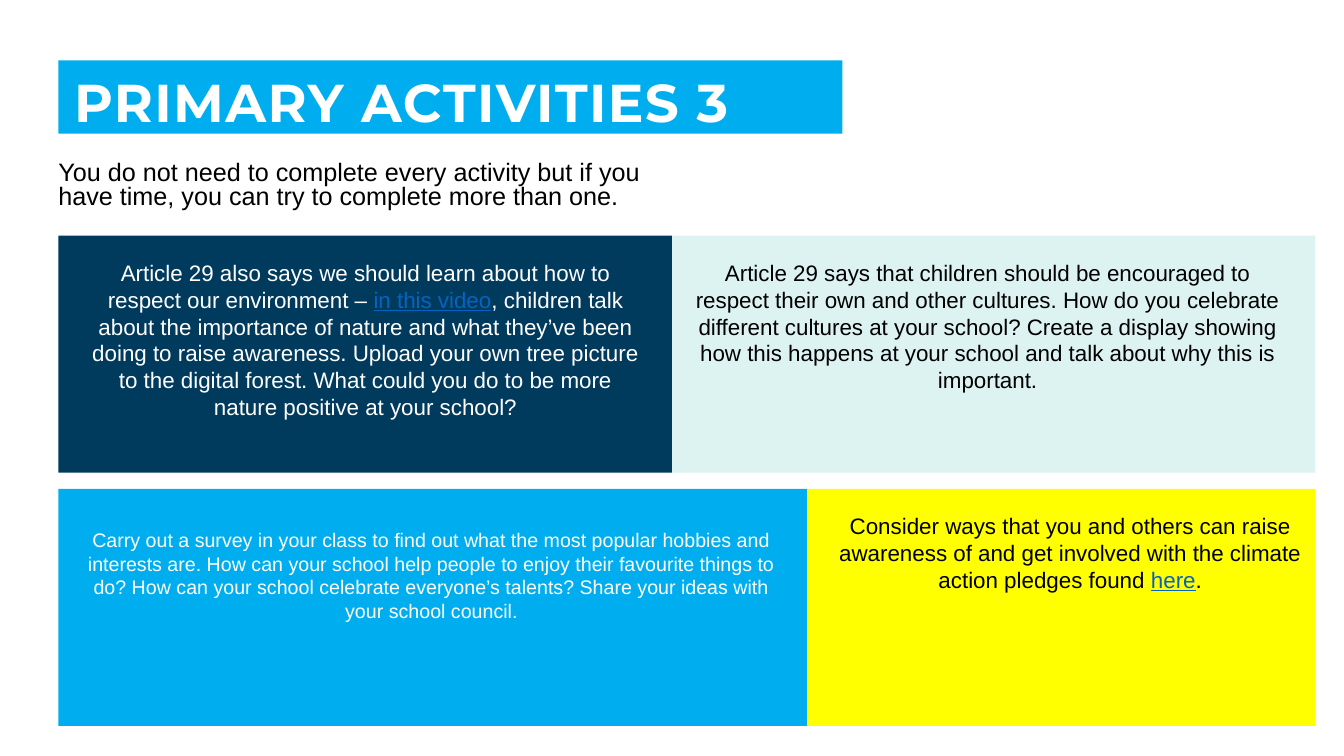
from dataclasses import dataclass

from pptx import Presentation
from pptx import util as u
from pptx.dml.color import RGBColor
from pptx.enum import shapes, text


@dataclass(frozen=True)
class Theme:
    sky: str = "00AEEF"
    navy: str = "003B5E"
    mint: str = "DDF3F1"
    yellow: str = "FFFF00"
    white: str = "FFFFFF"
    black: str = "000000"
    link: str = "0563C1"
    heading_font: str = "Montserrat"
    body_font: str = "Arial"
    heading_size: float = 38
    intro_size: float = 18
    activity_size: float = 16
    survey_size: float = 14


@dataclass(frozen=True)
class Box:
    left: float
    top: float
    width: float
    height: float

    def emu(self) -> tuple:
        return tuple(u.Cm(v) for v in (self.left, self.top, self.width, self.height))


@dataclass(frozen=True)
class Run:
    words: str
    is_link: bool = False


@dataclass(frozen=True)
class Activity:
    panel: Box
    fill: str
    words_at: Box
    color: str
    size: float
    runs: tuple


THEME = Theme()
LEFT, RIGHT = 1.47, 33.15
ROW_HEIGHT = 5.97
TOP_ROW, BOTTOM_ROW = 5.94, 12.32
TOP_SPLIT, BOTTOM_SPLIT = 16.94, 20.35


def panel_box(left: float, right: float, top: float) -> Box:
    return Box(left, top, right - left, ROW_HEIGHT)


ACTIVITIES = (
    Activity(
        panel_box(LEFT, TOP_SPLIT, TOP_ROW), THEME.navy,
        Box(1.96, 6.4, 14.5, 4.37), THEME.white, THEME.activity_size,
        (Run("Article 29 also says we should learn about how to respect our environment – "),
         Run("in this video", True),
         Run(", children talk about the importance of nature and what they’ve been doing "
             "to raise awareness. Upload your own tree picture to the digital forest. "
             "What could you do to be more nature positive at your school?"))),
    Activity(
        panel_box(TOP_SPLIT, RIGHT, TOP_ROW), THEME.mint,
        Box(17.09, 6.4, 15.6, 3.68), THEME.black, THEME.activity_size,
        (Run("Article 29 says that children should be encouraged to respect their own and "
             "other cultures. How do you celebrate different cultures at your school? "
             "Create a display showing how this happens at your school and talk about "
             "why this is important."),)),
    Activity(
        panel_box(LEFT, BOTTOM_SPLIT, BOTTOM_ROW), THEME.sky,
        Box(1.96, 13.18, 17.83, 2.64), THEME.white, THEME.survey_size,
        (Run("Carry out a survey in your class to find out what the most popular hobbies "
             "and interests are. How can your school help people to enjoy their favourite "
             "things to do? How can your school celebrate everyone’s talents? Share your "
             "ideas with your school council."),)),
    Activity(
        panel_box(BOTTOM_SPLIT, RIGHT, BOTTOM_ROW), THEME.yellow,
        Box(20.8, 12.78, 12.34, 2.31), THEME.black, THEME.activity_size,
        (Run("Consider ways that you and others can raise awareness of and get involved "
             "with the climate action pledges found "),
         Run("here", True),
         Run("."))),
)


def add_panel(slide, box: Box, fill: str):
    panel = slide.shapes.add_shape(shapes.MSO_SHAPE.RECTANGLE, *box.emu())
    panel.shadow.inherit = False
    panel.fill.solid()
    panel.fill.fore_color.rgb = RGBColor.from_string(fill)
    panel.line.fill.background()
    return panel


def add_words(shape, runs: tuple, size: float, color: str, font: str,
              align=text.PP_ALIGN.LEFT, line_spacing: float = 1.0) -> list:
    frame = shape.text_frame
    frame.word_wrap = True
    paragraph = frame.paragraphs[0]
    paragraph.alignment = align
    paragraph.line_spacing = line_spacing
    for part in runs:
        run = paragraph.add_run()
        run.text = part.words
        run.font.name = font
        run.font.size = u.Pt(size)
        run.font.color.rgb = RGBColor.from_string(THEME.link if part.is_link else color)
        if part.is_link:
            run.font.underline = True
    return list(paragraph.runs)


def set_insets(frame, left: float, top: float, right: float, bottom: float) -> None:
    frame.margin_left, frame.margin_top = u.Cm(left), u.Cm(top)
    frame.margin_right, frame.margin_bottom = u.Cm(right), u.Cm(bottom)


def add_heading(slide) -> None:
    banner = add_panel(slide, Box(LEFT, 1.52, 19.76, 1.85), THEME.sky)
    set_insets(banner.text_frame, 0.4, 0.4, 0.3, 0)
    banner.text_frame.vertical_anchor = text.MSO_ANCHOR.MIDDLE
    for run in add_words(banner, (Run("PRIMARY ACTIVITIES 3"),), THEME.heading_size,
                         THEME.white, THEME.heading_font, line_spacing=0.9):
        run.font.bold = True
        run.font._element.set("spc", "100")  # letter spacing of 1 pt


def add_intro(slide) -> None:
    intro = slide.shapes.add_textbox(*Box(LEFT, 3.96, 15.77, 1.57).emu())
    set_insets(intro.text_frame, 0, 0.13, 0.25, 0.13)
    sentence = Run("You do not need to complete every activity but if you have time, "
                   "you can try to complete more than one.")
    add_words(intro, (sentence,), THEME.intro_size, THEME.black, THEME.body_font,
              line_spacing=0.8)


def add_activity(slide, activity: Activity) -> None:
    add_panel(slide, activity.panel, activity.fill)
    words = slide.shapes.add_textbox(*activity.words_at.emu())
    add_words(words, activity.runs, activity.size, activity.color, THEME.body_font,
              align=text.PP_ALIGN.CENTER)


def main() -> None:
    deck = Presentation()
    deck.slide_width, deck.slide_height = u.Cm(33.87), u.Cm(19.05)
    slide = deck.slides.add_slide(deck.slide_layouts[6])

    # Heading banner and introduction
    add_heading(slide)
    add_intro(slide)

    # Four activity panels in two rows
    for activity in ACTIVITIES:
        add_activity(slide, activity)

    deck.save("out.pptx")


if __name__ == "__main__":
    main()
